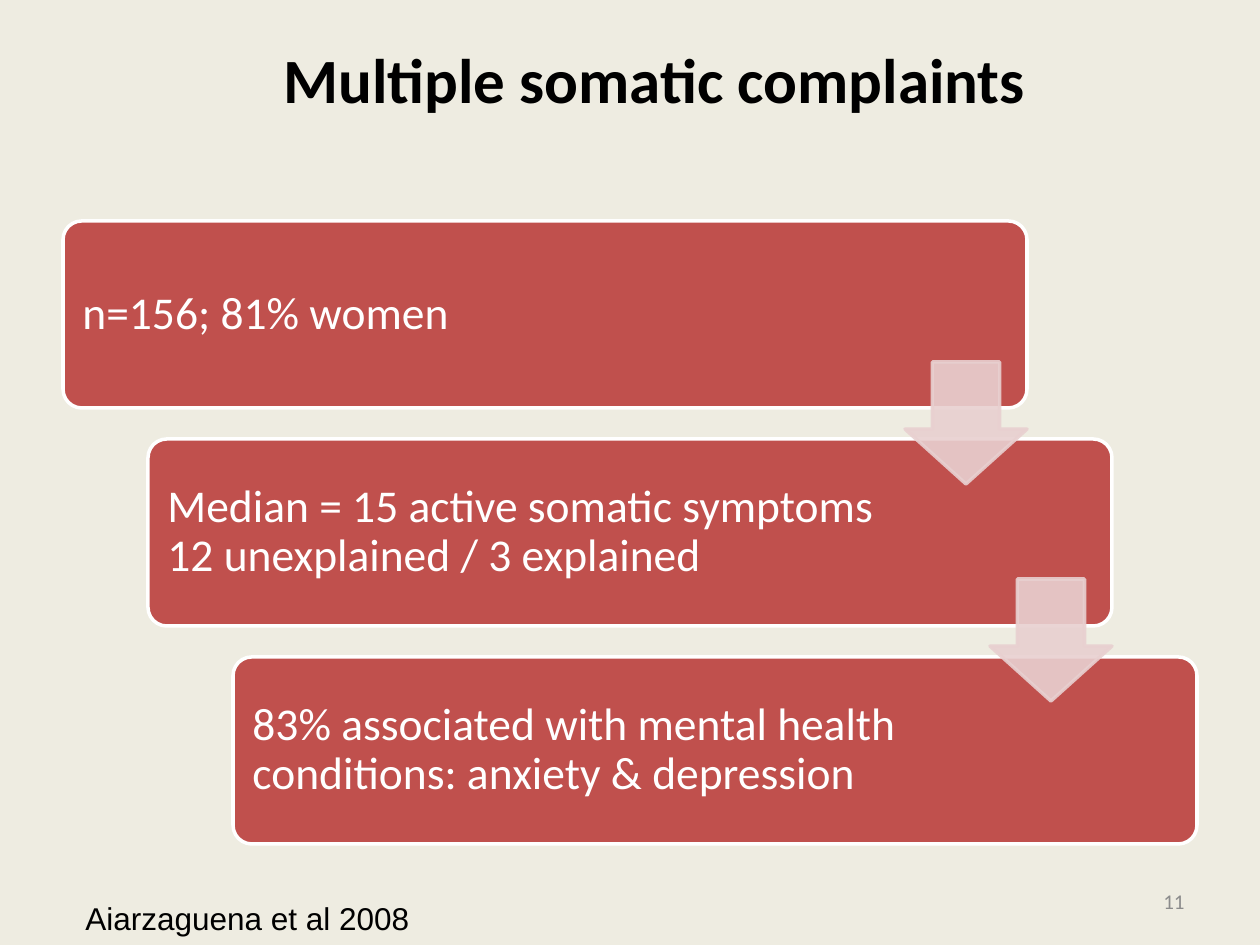
from lxml.etree import SubElement
from pptx import Presentation
from pptx.dml.color import RGBColor
from pptx.enum.shapes import MSO_SHAPE as Shape
from pptx.enum.text import MSO_ANCHOR as Anchor, MSO_AUTO_SIZE as AutoSize, PP_ALIGN as Align
from pptx.oxml.ns import qn
from pptx.util import Pt

PX = 914400 / 126
BACKGROUND = RGBColor(0xEE, 0xEC, 0xE1)
RED = RGBColor(0xC0, 0x50, 0x4D)
PINK = RGBColor(0xE8, 0xD0, 0xD0)
WHITE = RGBColor(0xFF, 0xFF, 0xFF)
BLACK = RGBColor(0, 0, 0)
GRAY = RGBColor(0x8C, 0x8C, 0x8C)

TITLE = "Multiple somatic complaints "
STEPS = [
    "n=156; 81% women",
    "Median = 15 active somatic symptoms 12 unexplained / 3 explained",
    "83% associated with mental health conditions: anxiety & depression",
]
CITATION = "Aiarzaguena et al 2008"
PAGE_NUMBER = "11"

STEP_LEFT, STEP_TOP, STEP_WIDTH, STEP_HEIGHT = 63, 221, 964, 187
STEP_SHIFT = (85, 218)
ARROW_LEFT, ARROW_TOP, ARROW_SIZE = 905, 362, 122
ARROW_SHIFT = (85, 217)
INSET_LEFT, INSET_RIGHT = 14, 222


def emu(*pixels):
    return [round(value * PX) for value in pixels]


def write(shape, text, size, color, font="Calibri", bold=False, align=Align.LEFT,
          anchor=Anchor.MIDDLE):
    frame = shape.text_frame
    frame.word_wrap = True
    frame.vertical_anchor = anchor
    para = frame.paragraphs[0]
    para.text = text
    para.alignment = align
    para.font.name = font
    para.font.size = Pt(size)
    para.font.bold = bold
    para.font.color.rgb = color
    return frame


def add_block(page, kind, place, fill, line, adjustments):
    shape = page.shapes.add_shape(kind, *emu(*place))
    shape.shadow.inherit = False
    shape.fill.solid()
    shape.fill.fore_color.rgb = fill
    shape.line.color.rgb = line
    shape.line.width = Pt(2)
    for index, value in enumerate(adjustments):
        shape.adjustments[index] = value
    return shape


def add_step(page, index, text):
    shift_x, shift_y = STEP_SHIFT
    place = (STEP_LEFT + index * shift_x, STEP_TOP + index * shift_y, STEP_WIDTH, STEP_HEIGHT)
    step = add_block(page, Shape.ROUNDED_RECTANGLE, place, RED, WHITE, [0.1])
    frame = write(step, text, 26, WHITE)
    frame.margin_left, frame.margin_right = emu(INSET_LEFT, INSET_RIGHT)
    frame.paragraphs[0].line_spacing = 0.9


def add_arrow(page, index):
    shift_x, shift_y = ARROW_SHIFT
    place = (ARROW_LEFT + index * shift_x, ARROW_TOP + index * shift_y, ARROW_SIZE, ARROW_SIZE)
    arrow = add_block(page, Shape.DOWN_ARROW, place, PINK, PINK, [0.55, 0.45])
    for color in arrow.element.spPr.iter(qn("a:srgbClr")):
        SubElement(color, qn("a:alpha"), val="90000")


def main():
    deck = Presentation()
    deck.slide_width, deck.slide_height = emu(1260, 945)
    page = deck.slides.add_slide(deck.slide_layouts[6])
    page.background.fill.solid()
    page.background.fill.fore_color.rgb = BACKGROUND

    title = page.shapes.add_textbox(*emu(231, 0, 861, 157))
    write(title, TITLE, 36, BLACK, bold=True, align=Align.CENTER)

    for index, text in enumerate(STEPS):
        add_step(page, index, text)
    for index in range(len(STEPS) - 1):
        add_arrow(page, index)

    number = page.shapes.add_textbox(*emu(903, 876, 294, 50))
    write(number, PAGE_NUMBER, 12, GRAY, align=Align.RIGHT)
    citation = page.shapes.add_textbox(*emu(73, 893, 536, 50))
    frame = write(citation, CITATION, 18, BLACK, font="Arial", anchor=Anchor.TOP)
    frame.auto_size = AutoSize.SHAPE_TO_FIT_TEXT

    deck.save("out.pptx")


if __name__ == "__main__":
    main()
